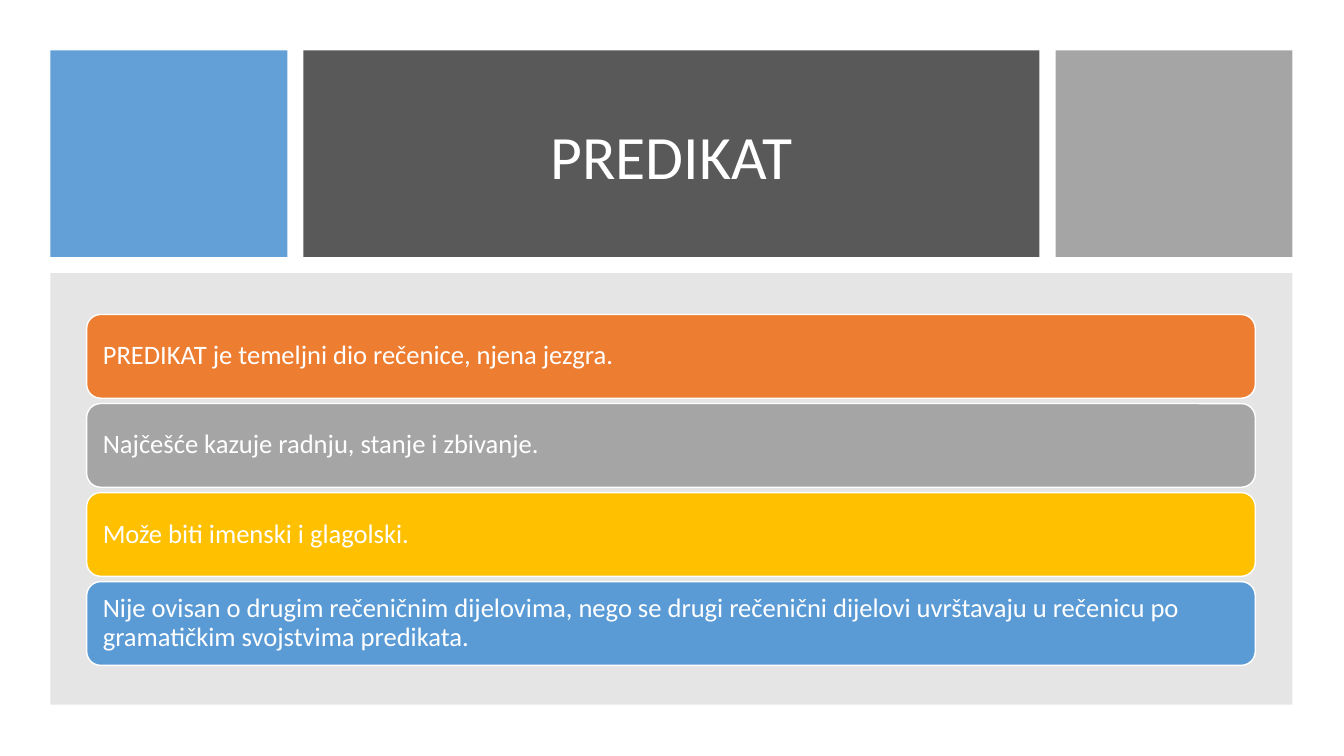
from dataclasses import dataclass

from lxml import etree
from pptx import Presentation
from pptx.dml.color import RGBColor
from pptx.enum.shapes import MSO_SHAPE
from pptx.enum.text import MSO_ANCHOR, PP_ALIGN
from pptx.oxml.ns import qn
from pptx.shapes.autoshape import Shape
from pptx.slide import Slide
from pptx.util import Inches, Pt

RECT, ROUNDED = MSO_SHAPE.RECTANGLE, MSO_SHAPE.ROUNDED_RECTANGLE
LEFT, CENTER = PP_ALIGN.LEFT, PP_ALIGN.CENTER
MIDDLE = MSO_ANCHOR.MIDDLE
WIDTH, HEIGHT = Inches(13.33), Inches(7.5)


@dataclass(frozen=True)
class Theme:
    font: str = "Calibri"
    title_size: int = 44
    body_size: int = 19
    line_width: int = 1
    white: str = "FFFFFF"
    blue: str = "5B9BD5"
    charcoal: str = "595959"
    gray: str = "A5A5A5"
    panel: str = "808080"
    orange: str = "ED7D31"
    yellow: str = "FFC000"


@dataclass(frozen=True)
class Block:
    """A filled block; its place is in percent of the slide's size."""
    left: float
    top: float
    width: float
    height: float
    fill: str
    opacity: int = 100


@dataclass(frozen=True)
class Statement:
    text: str
    fill: str


THEME = Theme()

# Header row: two side tiles around the title tile
MARGIN, GUTTER = 3.75, 1.2
SIDE, MIDDLE_WIDTH = 17.63, 54.76
HEADER_TOP, HEADER_HEIGHT = 6.67, 27.33
TITLE_LEFT = MARGIN + SIDE + GUTTER
RIGHT_LEFT = TITLE_LEFT + MIDDLE_WIDTH + GUTTER

BLUE_TILE = Block(MARGIN, HEADER_TOP, SIDE, HEADER_HEIGHT, THEME.blue, 95)
TITLE_TILE = Block(TITLE_LEFT, HEADER_TOP, MIDDLE_WIDTH, HEADER_HEIGHT, THEME.charcoal)
GRAY_TILE = Block(RIGHT_LEFT, HEADER_TOP, SIDE, HEADER_HEIGHT, THEME.gray)
PANEL = Block(MARGIN, 36.13, RIGHT_LEFT + SIDE - MARGIN, 57.07, THEME.panel, 20)

# Statement bars, stacked at an equal pitch
BAR_LEFT, BAR_TOP, BAR_WIDTH, BAR_HEIGHT, BAR_PITCH = 6.45, 41.6, 86.95, 11.07, 11.78
STATEMENTS = (
    Statement("PREDIKAT je temeljni dio rečenice, njena jezgra.", THEME.orange),
    Statement("Najčešće kazuje radnju, stanje i zbivanje.", THEME.gray),
    Statement("Može biti imenski i glagolski.", THEME.yellow),
    Statement("Nije ovisan o drugim rečeničnim dijelovima, nego se drugi rečenični "
              "dijelovi uvrštavaju u rečenicu po gramatičkim svojstvima predikata.",
              THEME.blue),
)


def draw_block(page: Slide, block: Block, kind: MSO_SHAPE = RECT) -> Shape:
    shape = page.shapes.add_shape(
        kind,
        round(WIDTH * block.left / 100), round(HEIGHT * block.top / 100),
        round(WIDTH * block.width / 100), round(HEIGHT * block.height / 100))
    shape.shadow.inherit = False
    shape.fill.solid()
    shape.fill.fore_color.rgb = RGBColor.from_string(block.fill)
    shape.line.fill.background()
    if block.opacity < 100:
        color = shape.fill._xPr.find(f"{qn('a:solidFill')}/{qn('a:srgbClr')}")
        etree.SubElement(color, qn("a:alpha")).set("val", str(block.opacity * 1000))
    return shape


def write_text(shape: Shape, text: str, size: int, align: PP_ALIGN) -> None:
    frame = shape.text_frame
    frame.word_wrap = True
    frame.vertical_anchor = MIDDLE
    frame.margin_left = frame.margin_right = Inches(0.12)
    para = frame.paragraphs[0]
    para.text = text
    para.alignment = align
    para.line_spacing = 0.9
    para.font.name = THEME.font
    para.font.size = Pt(size)
    para.font.color.rgb = RGBColor.from_string(THEME.white)


def draw_statement(page: Slide, row: int, statement: Statement) -> None:
    bar = draw_block(page, Block(BAR_LEFT, BAR_TOP + row * BAR_PITCH,
                                 BAR_WIDTH, BAR_HEIGHT, statement.fill), ROUNDED)
    bar.line.color.rgb = RGBColor.from_string(THEME.white)
    bar.line.width = Pt(THEME.line_width)
    write_text(bar, statement.text, THEME.body_size, LEFT)


def main() -> None:
    deck = Presentation()
    deck.slide_width, deck.slide_height = WIDTH, HEIGHT
    page = deck.slides.add_slide(deck.slide_layouts[6])

    # Header
    draw_block(page, BLUE_TILE)
    title = draw_block(page, TITLE_TILE)
    write_text(title, "PREDIKAT", THEME.title_size, CENTER)
    title.text_frame.margin_top = Inches(0.16)
    draw_block(page, GRAY_TILE)

    # Panel with statements
    draw_block(page, PANEL)
    for row, statement in enumerate(STATEMENTS):
        draw_statement(page, row, statement)

    deck.save("out.pptx")


if __name__ == "__main__":
    main()
